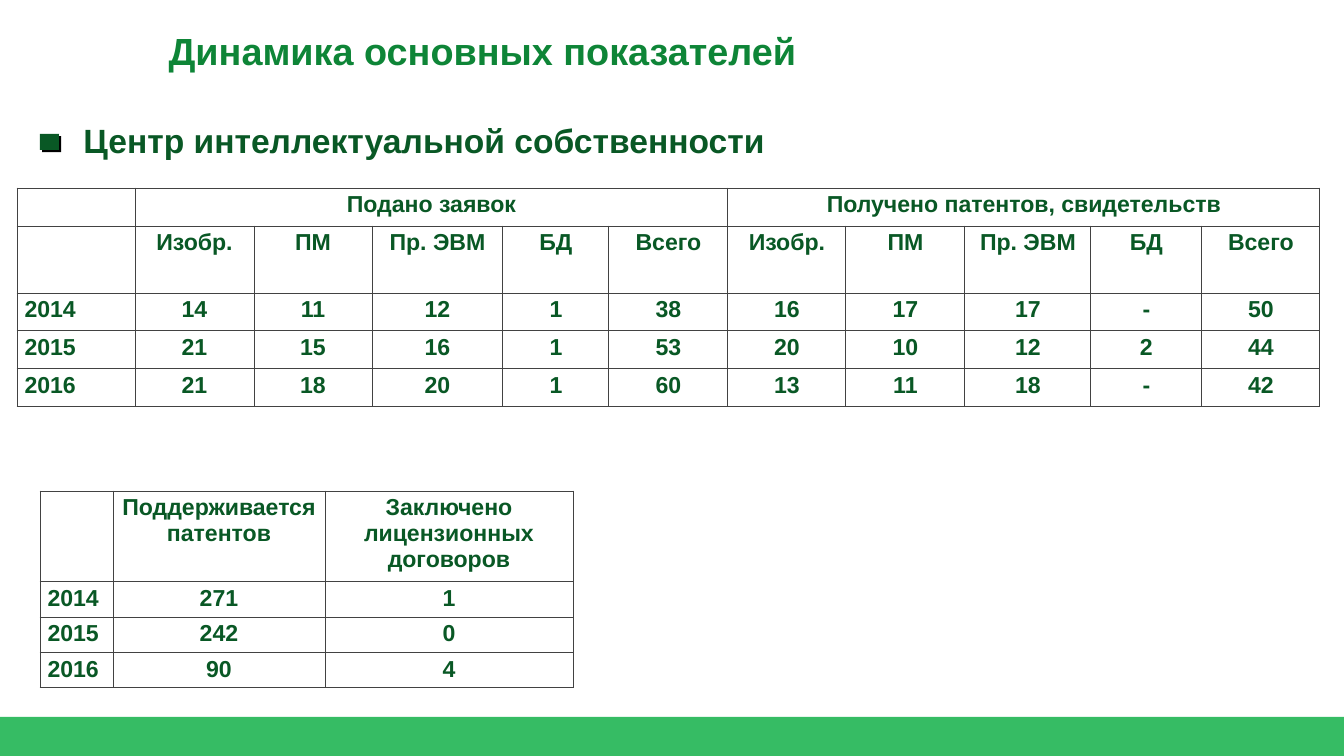
from dataclasses import dataclass

from lxml import etree
from pptx import Presentation
from pptx import util as u
from pptx.dml.color import RGBColor
from pptx.enum import shapes, text
from pptx.oxml import parse_xml
from pptx.oxml.ns import nsdecls, qn

EMU_PER_PX = 914400 / 75.6
FONT = "Arial"
BAND_GREEN = RGBColor(0x13, 0xB1, 0x4A)
TITLE_GREEN = RGBColor(0x0E, 0x85, 0x37)
DARK_GREEN = RGBColor(0x09, 0x58, 0x25)
BORDER_GRAY = RGBColor(0x42, 0x42, 0x42)


@dataclass(frozen=True)
class Box:
    x: int
    y: int
    w: int
    h: int

    def emu(self) -> tuple[int, ...]:
        return tuple(px(v) for v in (self.x, self.y, self.w, self.h))


@dataclass(frozen=True)
class TableSpec:
    x: int
    y: int
    cols: list[int]
    rows: list[int]
    cells: list[list[str]]
    merges: tuple[tuple[int, int], ...] = ()  # first and last column in the top row


def px(value: int) -> u.Emu:
    return u.Emu(round(value * EMU_PER_PX))


def style(p, size: int, color: RGBColor, align=text.PP_ALIGN.LEFT) -> None:
    p.alignment = align
    p.font.name = FONT
    p.font.size = u.Pt(size)
    p.font.bold = True
    p.font.color.rgb = color


def add_rect(s, box: Box, color: RGBColor):
    sp = s.shapes.add_shape(shapes.MSO_SHAPE.RECTANGLE, *box.emu())
    sp.fill.solid()
    sp.fill.fore_color.rgb = color
    sp.line.fill.background()
    sp.shadow.inherit = False
    return sp


def add_band(s) -> None:
    band = add_rect(s, Box(0, 717, 1344, 39), BAND_GREEN)
    color = band.fill._xPr.find(f".//{qn('a:srgbClr')}")
    etree.SubElement(color, qn("a:alpha"), val="85000")


def add_marker(s) -> None:
    """Draw the square bullet with its hard black shadow."""
    marker = add_rect(s, Box(40, 134, 19, 16), DARK_GREEN)
    marker._element.spPr.find(qn("a:effectLst")).append(parse_xml(
        f'<a:outerShdw {nsdecls("a")} blurRad="0" dist="{u.Pt(2.8)}" dir="2700000" '
        'algn="ctr" rotWithShape="0"><a:srgbClr val="000000"/></a:outerShdw>'))


def add_borders(cell) -> None:
    tc_pr = cell._tc.get_or_add_tcPr()
    for i, side in enumerate(("lnL", "lnR", "lnT", "lnB")):
        tc_pr.insert(i, parse_xml(
            f'<a:{side} {nsdecls("a")} w="{u.Pt(1)}"><a:solidFill>'
            f'<a:srgbClr val="{BORDER_GRAY}"/></a:solidFill></a:{side}>'))


def add_table(s, spec: TableSpec) -> None:
    box = Box(spec.x, spec.y, sum(spec.cols), sum(spec.rows))
    table = s.shapes.add_table(len(spec.rows), len(spec.cols), *box.emu()).table
    table.first_row = table.horz_banding = False
    for column, width in zip(table.columns, spec.cols):
        column.width = px(width)
    for row, height in zip(table.rows, spec.rows):
        row.height = px(height)
    for r, values in enumerate(spec.cells):
        for c, value in enumerate(values):
            cell = table.cell(r, c)
            cell.fill.background()
            add_borders(cell)
            cell.text = value
            align = text.PP_ALIGN.CENTER if c else text.PP_ALIGN.LEFT
            style(cell.text_frame.paragraphs[0], 22, DARK_GREEN, align)
    for first, last in spec.merges:
        table.cell(0, first).merge(table.cell(0, last))


def set_title(s, value: str) -> None:
    title = s.shapes.title
    title.left, title.top, title.width, title.height = Box(161, 8, 1172, 84).emu()
    tf = title.text_frame
    tf.text = value
    tf.auto_size = text.MSO_AUTO_SIZE.NONE
    tf.vertical_anchor = text.MSO_ANCHOR.MIDDLE
    tf.margin_left = tf.margin_right = tf.margin_top = tf.margin_bottom = u.Inches(0.1)
    style(tf.paragraphs[0], 36, TITLE_GREEN)


def add_heading(s, value: str) -> None:
    tf = s.shapes.add_textbox(*Box(76, 116, 1018, 48).emu()).text_frame
    tf.word_wrap = True
    tf.text = value
    style(tf.paragraphs[0], 32, DARK_GREEN)


KINDS = ["Изобр.", "ПМ", "Пр. ЭВМ", "БД", "Всего"]
APPLICATIONS = TableSpec(
    17, 188,
    cols=[118, 119, 118, 131, 106, 119, 118, 119, 126, 111, 118],
    rows=[38, 67, 38, 38, 38],
    cells=[
        ["", "Подано заявок", "", "", "", "", "Получено патентов, свидетельств", "", "", "", ""],
        ["", *KINDS, *KINDS],
        ["2014", "14", "11", "12", "1", "38", "16", "17", "17", "-", "50"],
        ["2015", "21", "15", "16", "1", "53", "20", "10", "12", "2", "44"],
        ["2016", "21", "18", "20", "1", "60", "13", "11", "18", "-", "42"],
    ],
    merges=((1, 5), (6, 10)),
)
LICENCES = TableSpec(
    40, 491,
    cols=[73, 212, 248],
    rows=[85, 33, 33, 33],
    cells=[
        ["", "Поддерживается патентов", "Заключено лицензионных договоров"],
        ["2014", "271", "1"],
        ["2015", "242", "0"],
        ["2016", "90", "4"],
    ],
)


def main() -> None:
    prs = Presentation()
    prs.slide_width, prs.slide_height = px(1344), px(756)
    s = prs.slides.add_slide(prs.slide_layouts[5])
    add_band(s)
    add_marker(s)
    add_heading(s, "Центр интеллектуальной собственности")
    set_title(s, "Динамика основных показателей")
    for spec in (APPLICATIONS, LICENCES):
        add_table(s, spec)
    prs.save("out.pptx")


if __name__ == "__main__":
    main()
